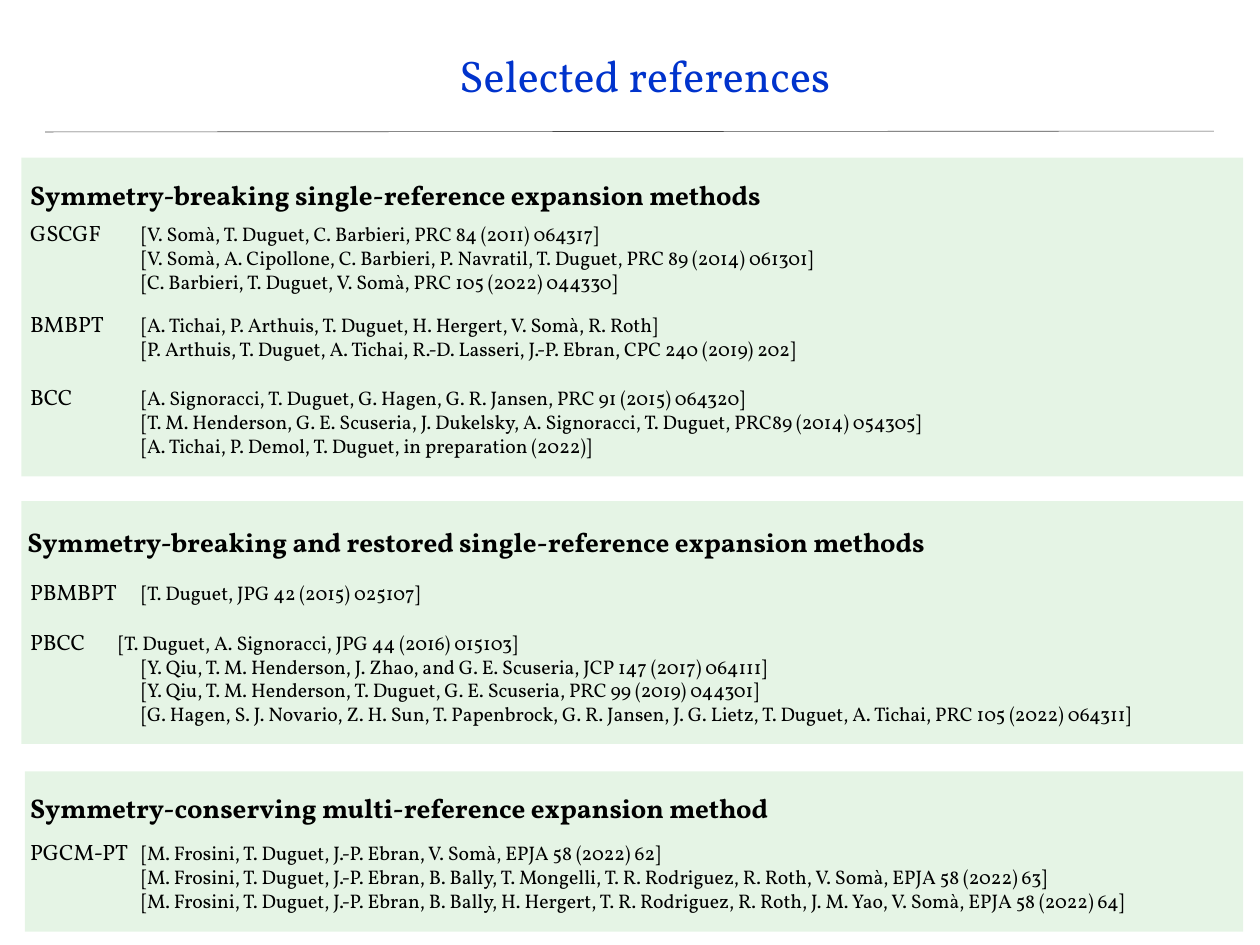
"""Build the slide of selected references, grouped by expansion method."""
from pptx import Presentation
from pptx.dml.color import RGBColor
from pptx.enum.shapes import MSO_CONNECTOR, MSO_SHAPE
from pptx.enum.text import MSO_ANCHOR, MSO_AUTO_SIZE, PP_ALIGN
from pptx.oxml.ns import qn
from pptx.util import Inches, Pt
from lxml import etree

RECT, LINE = MSO_SHAPE.RECTANGLE, MSO_CONNECTOR.STRAIGHT
LOW, MID = MSO_ANCHOR.BOTTOM, MSO_ANCHOR.MIDDLE
LEFT, MIDDLE = PP_ALIGN.LEFT, PP_ALIGN.CENTER
GROW, FIXED = MSO_AUTO_SIZE.SHAPE_TO_FIT_TEXT, MSO_AUTO_SIZE.NONE

TITLE = "Selected references"
WIDE, NARROW = 1.26, 0.62
PANELS = [
    {"box": (0.24, 1.78, 13.79, 3.6),
     "head": "Symmetry-breaking single-reference expansion methods",
     "at": (0.28, 1.84, 9.1, 0.6),
     "groups": [
         ("GSCGF", 2.42, 0.95, WIDE, [
             "[V. Somà, T. Duguet, C. Barbieri, PRC 84 (2011) 064317]",
             "[V. Somà, A. Cipollone, C. Barbieri, P. Navratil, T. Duguet, PRC 89 (2014) 061301]",
             "[C. Barbieri, T. Duguet, V. Somà, PRC 105 (2022) 044330]"]),
         ("BMBPT", 3.45, 0.68, WIDE, [
             "[A. Tichai, P. Arthuis, T. Duguet, H. Hergert, V. Somà, R. Roth]",
             "[P. Arthuis, T. Duguet, A. Tichai, R.-D. Lasseri, J.-P. Ebran, CPC 240 (2019) 202]"]),
         ("BCC", 4.27, 0.95, WIDE, [
             "[A. Signoracci, T. Duguet, G. Hagen, G. R. Jansen, PRC 91 (2015) 064320]",
             "[T. M. Henderson, G. E. Scuseria, J. Dukelsky, A. Signoracci, T. Duguet, PRC89 (2014) 054305]",
             "[A. Tichai, P. Demol, T. Duguet, in preparation (2022)]"])]},
    {"box": (0.24, 5.66, 13.79, 2.74),
     "head": "Symmetry-breaking and restored single-reference expansion methods",
     "at": (0.25, 5.76, 13.97, 0.6),
     "groups": [
         ("PBMBPT", 6.47, 0.42, WIDE, ["[T. Duguet, JPG 42 (2015) 025107]"]),
         ("PBCC", 7.03, 1.22, NARROW, [
             "[T. Duguet, A. Signoracci, JPG 44 (2016) 015103]",
             "[Y. Qiu, T. M. Henderson, J. Zhao, and G. E. Scuseria, JCP 147 (2017) 064111]",
             "[Y. Qiu, T. M. Henderson, T. Duguet, G. E. Scuseria, PRC 99 (2019) 044301]",
             "[G. Hagen, S. J. Novario, Z. H. Sun, T. Papenbrock, G. R. Jansen, J. G. Lietz, "
             "T. Duguet, A. Tichai, PRC 105 (2022) 064311]"])]},
    {"box": (0.28, 8.71, 13.75, 1.81),
     "head": "Symmetry-conserving multi-reference expansion method",
     "at": (0.28, 8.69, 13.97, 0.67),
     "groups": [
         ("PGCM-PT", 9.41, 0.95, WIDE, [
             "[M. Frosini, T. Duguet, J.-P. Ebran, V. Somà, EPJA 58 (2022) 62]",
             "[M. Frosini, T. Duguet, J.-P. Ebran, B. Bally, T. Mongelli, T. R. Rodriguez, "
             "R. Roth, V. Somà, EPJA 58 (2022) 63]",
             "[M. Frosini, T. Duguet, J.-P. Ebran, B. Bally, H. Hergert, T. R. Rodriguez, "
             "R. Roth, J. M. Yao, V. Somà, EPJA 58 (2022) 64]"])]},
]
THEME = {"font": "Vollkorn", "title": 36, "head": 22, "label": 18, "cite": 16,
         "blue": "0033CC", "ink": "000000", "rule": "494949",
         "green": "009900", "alpha": 10}


def color(name):
    return RGBColor.from_string(THEME[name])


def add_text(slide, at, lines, hue="ink", bold=False, align=LEFT, anchor=MID,
             inset=0.06, space=None, fit=GROW):
    """Write lines, each a tuple of runs, indent and tab stop."""
    frame = slide.shapes.add_textbox(*map(Inches, at)).text_frame
    frame.word_wrap, frame.auto_size, frame.vertical_anchor = True, fit, anchor
    frame.margin_left = frame.margin_right = Inches(inset)
    frame.margin_top = frame.margin_bottom = Inches(inset)
    for i, (runs, indent, stop) in enumerate(lines):
        para = frame.add_paragraph() if i else frame.paragraphs[0]
        para.alignment = align
        if space:
            para.line_spacing = space
        props = para._p.get_or_add_pPr()
        if indent:
            props.set("marL", str(Inches(indent)))
            props.set("indent", "0")
        if stop:
            tabs = etree.SubElement(props, qn("a:tabLst"))
            etree.SubElement(tabs, qn("a:tab"), pos=str(Inches(stop)), algn="l")
        for text, size in runs:
            run = para.add_run()
            run.text = text
            run.font.name, run.font.size = THEME["font"], Pt(THEME[size])
            run.font.bold, run.font.color.rgb = bold, color(hue)


def add_panel(slide, box):
    """Draw one pale green panel."""
    panel = slide.shapes.add_shape(RECT, *map(Inches, box))
    panel.shadow.inherit = False
    panel.fill.solid()
    panel.fill.fore_color.rgb = color("green")
    panel.line.fill.background()
    tint = panel._element.spPr.find(qn("a:solidFill"))[0]
    etree.SubElement(tint, qn("a:alpha"), val=str(THEME["alpha"] * 1000))


def add_group(slide, label, top, height, stop, cites):
    """Write a method label with its citations in a column."""
    first, *rest = cites
    lines = [([(label, "label"), ("\t" + first, "cite")], 0, stop)]
    lines += [([(cite, "cite")], WIDE, 0) for cite in rest]
    add_text(slide, (0.28, top, 13.94, height), lines)


def main():
    deck = Presentation()
    deck.slide_width, deck.slide_height = Inches(14.22), Inches(10.67)
    slide = deck.slides.add_slide(deck.slide_layouts[6])
    rule = slide.shapes.add_connector(LINE, *map(Inches, (0.51, 1.49, 13.7, 1.48)))
    rule.line.color.rgb, rule.line.width = color("rule"), Pt(0.5)
    etree.SubElement(rule._element.spPr, qn("a:effectLst"))
    add_text(slide, (0.65, 0.27, 13.25, 0.87), [([(TITLE, "title")], 0, 0)],
             hue="blue", align=MIDDLE, anchor=LOW, inset=0, fit=FIXED)
    for panel in PANELS:
        add_panel(slide, panel["box"])
        add_text(slide, panel["at"], [([(panel["head"], "head")], 0, 0)],
                 bold=True, anchor=LOW, space=1.5)
        for group in panel["groups"]:
            add_group(slide, *group)
    deck.save("out.pptx")


if __name__ == "__main__":
    main()
